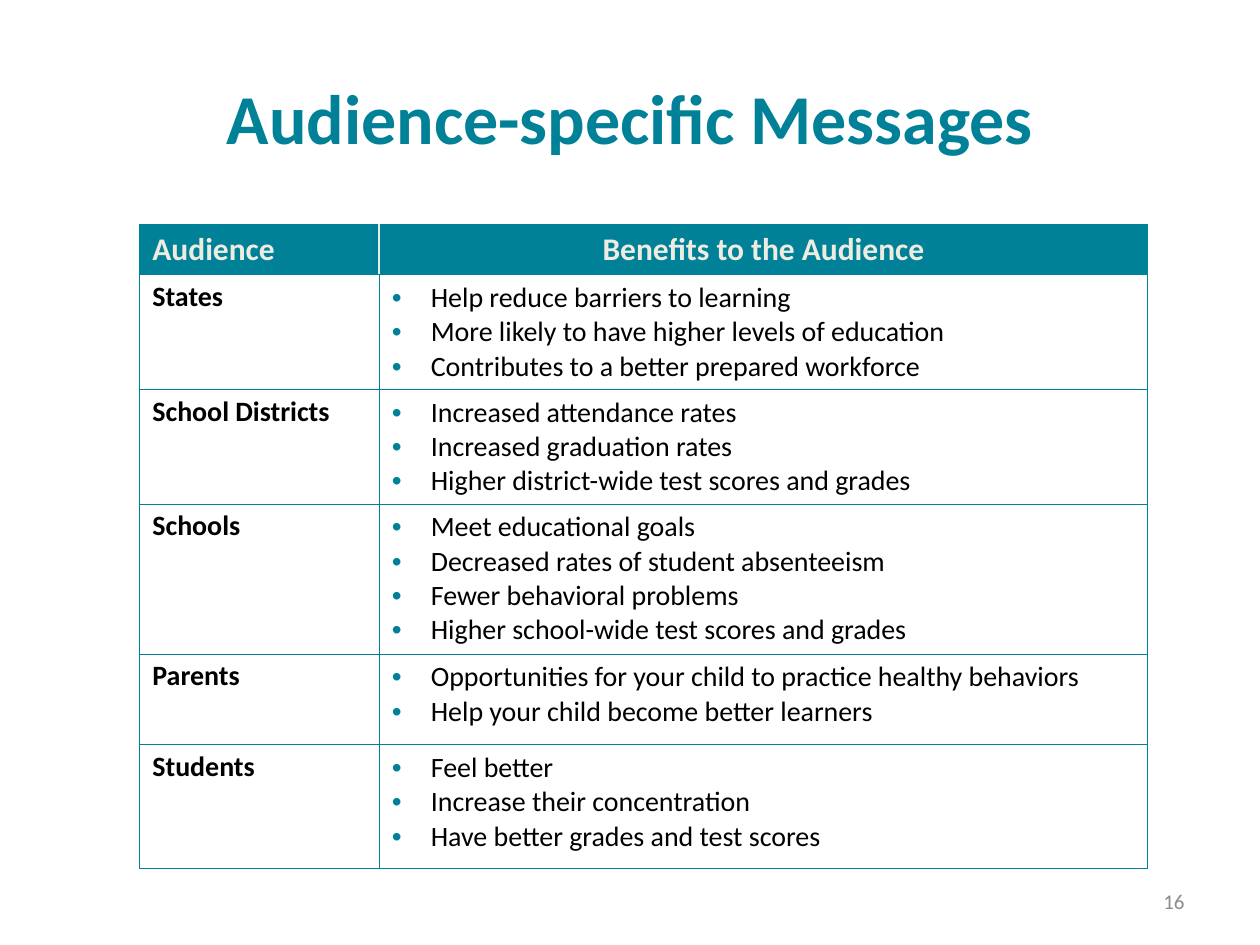
from lxml.etree import SubElement
from pptx import Presentation
from pptx.dml.color import RGBColor
from pptx.enum.text import MSO_ANCHOR, PP_ALIGN
from pptx.oxml.ns import qn
from pptx.util import Inches, Pt

TEAL = RGBColor(0x00, 0x81, 0x98)
CREAM = RGBColor(0xEE, 0xEC, 0xE1)
GRAY = RGBColor(0x8C, 0x8C, 0x8C)
BLACK = RGBColor(0x00, 0x00, 0x00)
WHITE = RGBColor(0xFF, 0xFF, 0xFF)

FONT = "Calibri"
COLUMN_WIDTHS = (1.9, 6.1)
ROW_HEIGHTS = (0.4, 0.91, 0.91, 1.19, 0.72, 0.98)
HEADER_MARGINS = (0.1, 0.05, 0.1, 0.05)
AUDIENCE_MARGINS = (0.1, 0, 0.07, 0)
BULLET_INDENT = Inches(0.31)

HEADINGS = (("Audience", PP_ALIGN.LEFT), ("Benefits to the Audience", PP_ALIGN.CENTER))
BENEFITS = {
    "States": (
        "Help reduce barriers to learning",
        "More likely to have higher levels of education",
        "Contributes to a better prepared workforce",
    ),
    "School Districts": (
        "Increased attendance rates",
        "Increased graduation rates",
        "Higher district-wide test scores and grades",
    ),
    "Schools": (
        "Meet educational goals",
        "Decreased rates of student absenteeism",
        "Fewer behavioral problems",
        "Higher school-wide test scores and grades",
    ),
    "Parents": (
        "Opportunities for your child to practice healthy behaviors",
        "Help your child become better learners",
    ),
    "Students": (
        "Feel better",
        "Increase their concentration",
        "Have better grades and test scores",
    ),
}


def style_font(para, size, color, bold=False):
    font = para.font
    font.name, font.size, font.bold = FONT, Pt(size), bold
    font.color.rgb = color


def add_text(slide, text, area, size, color, align, bold=False):
    box = slide.shapes.add_textbox(*map(Inches, area))
    frame = box.text_frame
    frame.word_wrap = True
    frame.vertical_anchor = MSO_ANCHOR.MIDDLE
    para = frame.paragraphs[0]
    para.text = text
    para.alignment = align
    style_font(para, size, color, bold)


def add_bullet(para):
    properties = para._p.get_or_add_pPr()
    properties.set("marL", str(BULLET_INDENT))
    properties.set("indent", str(-BULLET_INDENT))
    color = SubElement(properties, qn("a:buClr"))
    SubElement(color, qn("a:srgbClr"), val=str(TEAL))
    SubElement(properties, qn("a:buFont"), typeface="Arial")
    SubElement(properties, qn("a:buChar"), char="•")


def style_cell(cell, fill, margins, divider=None):
    """Set borders, fill and margins; divider is a (side, color) that differs."""
    properties = cell._tc.get_or_add_tcPr()
    for side in ("lnL", "lnR", "lnT", "lnB"):
        color, width = TEAL, 0.5
        if divider and divider[0] == side:
            color, width = divider[1], 1
        line = SubElement(properties, qn(f"a:{side}"), w=str(Pt(width)))
        solid = SubElement(line, qn("a:solidFill"))
        SubElement(solid, qn("a:srgbClr"), val=str(color))
    cell.fill.solid()
    cell.fill.fore_color.rgb = fill
    cell.margin_left, cell.margin_top, cell.margin_right, cell.margin_bottom = map(Inches, margins)


def fill_header(table):
    for column, (heading, align) in enumerate(HEADINGS):
        cell = table.cell(0, column)
        style_cell(cell, TEAL, HEADER_MARGINS, (("lnR", "lnL")[column], CREAM))
        para = cell.text_frame.paragraphs[0]
        para.text = heading
        para.alignment = align
        style_font(para, 18, CREAM, bold=True)


def fill_audience(cell, audience):
    style_cell(cell, WHITE, AUDIENCE_MARGINS)
    para = cell.text_frame.paragraphs[0]
    para.text = audience
    para.line_spacing = 1.15
    style_font(para, 16, BLACK, bold=True)


def fill_benefits(cell, benefits):
    style_cell(cell, WHITE, HEADER_MARGINS)
    cell.text_frame.text = "\n".join(benefits)
    for para in cell.text_frame.paragraphs:
        add_bullet(para)
        style_font(para, 16, BLACK)


def add_benefit_table(slide):
    frame = slide.shapes.add_table(
        len(ROW_HEIGHTS), len(COLUMN_WIDTHS), Inches(1.11), Inches(1.78),
        Inches(sum(COLUMN_WIDTHS)), Inches(sum(ROW_HEIGHTS)))
    table = frame.table
    table.horz_banding = False
    for column, width in zip(table.columns, COLUMN_WIDTHS):
        column.width = Inches(width)
    for row, height in zip(table.rows, ROW_HEIGHTS):
        row.height = Inches(height)
    fill_header(table)
    for row, (audience, benefits) in enumerate(BENEFITS.items(), start=1):
        fill_audience(table.cell(row, 0), audience)
        fill_benefits(table.cell(row, 1), benefits)


def main():
    deck = Presentation()
    deck.slide_width, deck.slide_height = Inches(10), Inches(7.5)
    slide = deck.slides.add_slide(deck.slide_layouts[6])
    add_text(slide, "Audience-specific Messages", (0.5, 0.3, 9, 1.25), 40, TEAL,
             PP_ALIGN.CENTER, bold=True)
    add_benefit_table(slide)
    add_text(slide, "16", (7.17, 6.95, 2.33, 0.4), 12, GRAY, PP_ALIGN.RIGHT)
    deck.save("out.pptx")


if __name__ == "__main__":
    main()
